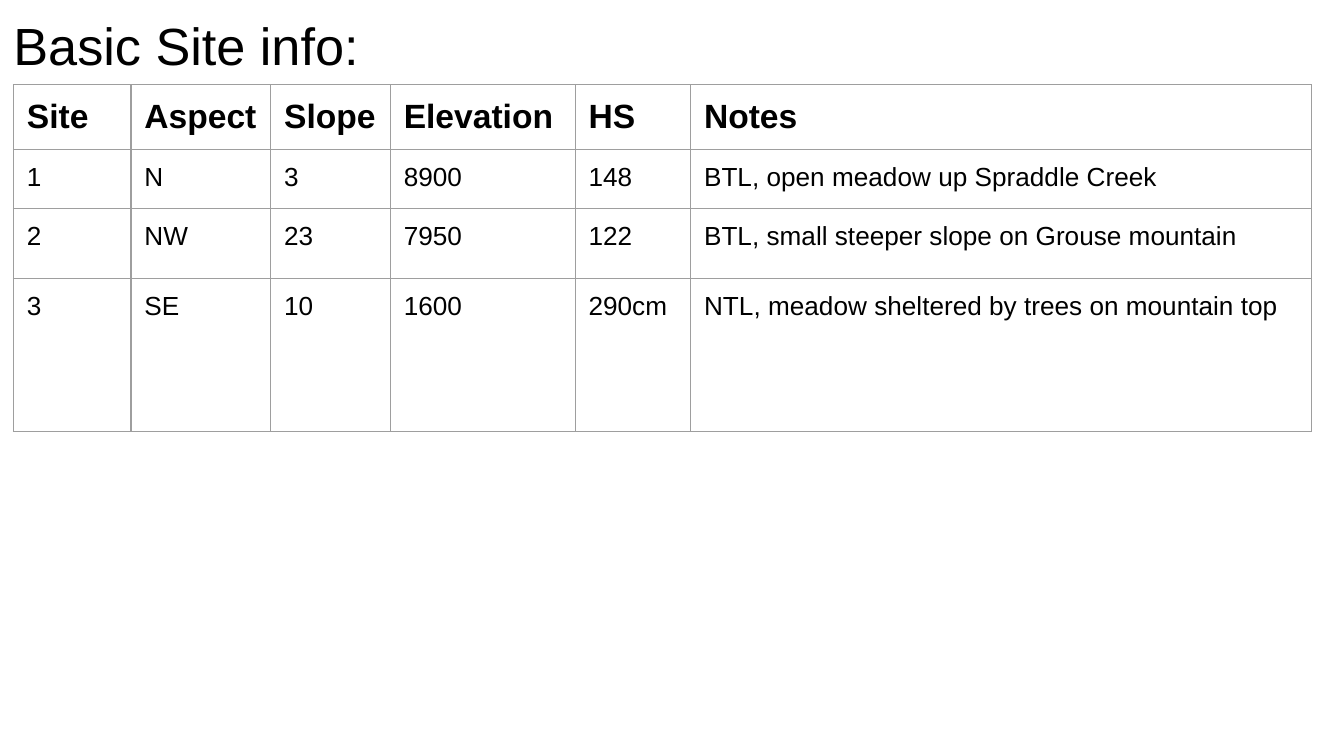
from lxml.etree import SubElement
from pptx import Presentation
from pptx.dml.color import RGBColor as RGB
from pptx.enum.text import MSO_ANCHOR as Anchor, MSO_AUTO_SIZE as AutoSize, PP_ALIGN as Align
from pptx.oxml.ns import qn
from pptx.util import Inches, Pt

COLORS = {"text": "000000", "border": "9E9E9E", "background": "FFFFFF"}
FONT = "Arial"
UNIT = 0.1  # inches per grid column and grid row
MARGIN = 1  # text inset, in grid units

HEADERS = ["Site", "Aspect", "Slope", "Elevation", "HS", "Notes"]
SITES = [
    ["1", "N", "3", "8900", "148", "BTL, open meadow up Spraddle Creek"],
    ["2", "NW", "23", "7950", "122", "BTL, small steeper slope on Grouse mountain"],
    ["3", "SE", "10", "1600", "290cm", "NTL, meadow sheltered by trees on mountain top"],
]
COL_WIDTHS = [8.75, 10.4, 8.9, 13.75, 8.6, 46.2]
ROW_HEIGHTS = [4.4, 4.4, 5.2, 11.4]


def grid(units):
    return Inches(units * UNIT)


def write(tf, text, size=14, bold=False, color="text"):
    p = tf.paragraphs[0]
    p.alignment = Align.LEFT
    r = p.add_run()
    r.text = text
    r.font.name = FONT
    r.font.size = Pt(size)
    r.font.bold = bold
    r.font.color.rgb = RGB.from_string(COLORS[color])


def set_margins(box):
    box.margin_left = box.margin_right = box.margin_top = box.margin_bottom = grid(MARGIN)
    box.vertical_anchor = Anchor.TOP


def add_borders(cell, color="border", width=0.75):
    """Outline all four sides; border lines must precede the cell's fill."""
    tc_pr = cell._tc.get_or_add_tcPr()
    for i, side in enumerate(("lnL", "lnR", "lnT", "lnB")):
        ln = SubElement(tc_pr, qn(f"a:{side}"), w=str(Pt(width)))
        fill = SubElement(ln, qn("a:solidFill"))
        SubElement(fill, qn("a:srgbClr"), val=COLORS[color])
        tc_pr.insert(i, ln)


class SlideBuilder:
    def __init__(self, prs):
        self.s = prs.slides.add_slide(prs.slide_layouts[5])
        fill = self.s.background.fill
        fill.solid()
        fill.fore_color.rgb = RGB.from_string(COLORS["background"])

    def title(self, text, left, top, width, height):
        sp = self.s.shapes.title
        sp.left, sp.top, sp.width, sp.height = map(grid, (left, top, width, height))
        tf = sp.text_frame
        tf.word_wrap = True
        tf.auto_size = AutoSize.NONE
        set_margins(tf)
        write(tf, text, size=28)

    def table(self, rows, left, top, widths, heights):
        frame = self.s.shapes.add_table(
            len(rows), len(widths), grid(left), grid(top),
            grid(sum(widths)), grid(sum(heights)))
        table = frame.table
        table.first_row = table.horz_banding = False
        for column, width in zip(table.columns, widths):
            column.width = grid(width)
        for i, (row, height) in enumerate(zip(table.rows, heights)):
            row.height = grid(height)
            header = i == 0
            for cell, text in zip(row.cells, rows[i]):
                cell.fill.background()
                set_margins(cell)
                add_borders(cell)
                write(cell.text_frame, text, size=18 if header else 14, bold=header)


def main():
    prs = Presentation()
    prs.slide_width = Inches(10)
    prs.slide_height = prs.slide_width * 9 // 16
    slide = SlideBuilder(prs)
    slide.title("Basic Site info:", 0, 0, 93.2, 6.3)
    slide.table([HEADERS] + SITES, 1, 6.3, COL_WIDTHS, ROW_HEIGHTS)
    prs.save("out.pptx")


if __name__ == "__main__":
    main()
